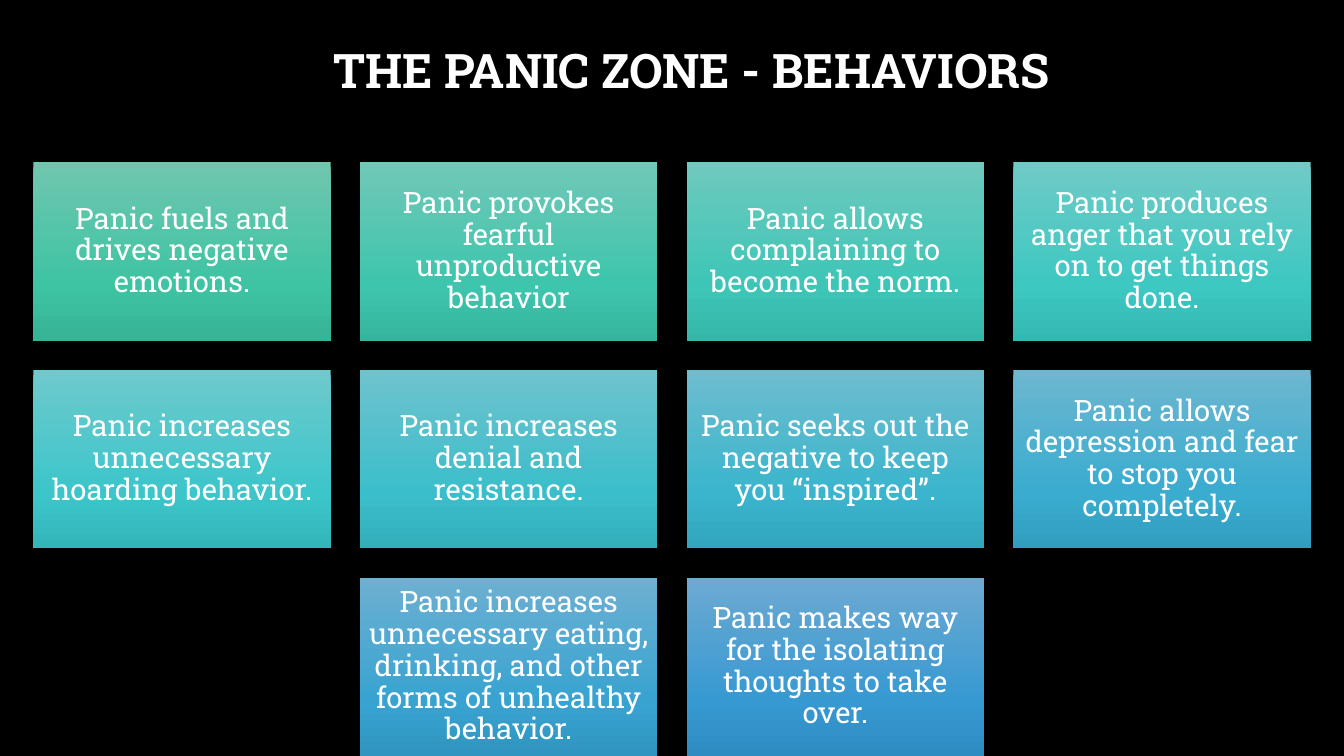
from copy import deepcopy
from pptx import Presentation, util as u
from pptx.dml.color import RGBColor
from pptx.enum import shapes, text
from pptx.oxml.ns import qn

# Content: each behavior with its gradient, top to bottom
TITLE = "THE PANIC ZONE - BEHAVIORS"
BEHAVIOR_ROWS = [
    [("Panic fuels and drives negative emotions.", "70C6AF 3EC4A3 37B395"),
     ("Panic provokes fearful unproductive behavior", "70C8B7 3EC5AD 36B59E"),
     ("Panic allows complaining to become the norm.", "6FC9BE 3DC6B7 35B6A8"),
     ("Panic produces anger that you rely on to get things done.", "6FCAC6 3DC8C2 34B8B3")],
    [("Panic increases unnecessary hoarding behavior.", "6EC9CC 3CC6CA 33B6BA"),
     ("Panic increases denial and resistance.", "6EC3CD 3BBECB 33AEBB"),
     ("Panic seeks out the negative to keep you “inspired”.", "6EBDCE 3AB5CD 32A6BD"),
     ("Panic allows depression and fear to stop you completely.", "6DB7D0 39ACCF 319EBF")],
    [("Panic increases unnecessary eating, drinking, and other forms of unhealthy behavior.",
      "6DB0D1 38A3D1 3095C0"),
     ("Panic makes way for the isolating thoughts to take over.", "6DAAD2 3799D2 2F8CC2")],
]
COLORS = {"background": "000000", "text": "FFFFFF"}
STOPS = (0, 0.69, 1)
FONT = "Roboto Slab"

# Grid, in inches
WIDTH, HEIGHT = 13.33, 7.5
COLUMNS = 4
CARD_W, CARD_H, GAP = 2.95, 1.77, 0.29
GRID_TOP = 1.61
INSET = 0.09

deck = Presentation()
deck.slide_width, deck.slide_height = u.Inches(WIDTH), u.Inches(HEIGHT)
slide = deck.slides.add_slide(deck.slide_layouts[6])
slide.background.fill.solid()
slide.background.fill.fore_color.rgb = RGBColor.from_string(COLORS["background"])


def write(frame, words, size, bold=False):
    frame.word_wrap = True
    frame.vertical_anchor = text.MSO_ANCHOR.MIDDLE
    line = frame.paragraphs[0]
    line.alignment = text.PP_ALIGN.CENTER
    line.line_spacing = 0.9
    run = line.add_run()
    run.text = words
    run.font.name, run.font.size, run.font.bold = FONT, u.Pt(size), bold
    run.font.color.rgb = RGBColor.from_string(COLORS["text"])


def fill_gradient(card, shades):
    card.fill.gradient()
    card.fill.gradient_angle = 270
    stop_list = card._element.spPr.find(qn("a:gradFill")).find(qn("a:gsLst"))
    stop_list.append(deepcopy(stop_list[-1]))
    for stop, position, shade in zip(card.fill.gradient_stops, STOPS, shades):
        stop.position = position
        stop.color.rgb = RGBColor.from_string(shade)


def add_card(left, top, words, shades):
    card = slide.shapes.add_shape(
        shapes.MSO_SHAPE.RECTANGLE,
        u.Inches(left), u.Inches(top), u.Inches(CARD_W), u.Inches(CARD_H))
    card.shadow.inherit = False
    card.line.fill.background()
    fill_gradient(card, shades)
    frame = card.text_frame
    frame.margin_left = frame.margin_right = u.Inches(INSET)
    frame.margin_top = frame.margin_bottom = u.Inches(INSET)
    write(frame, words, 21)


# Title
heading = slide.shapes.add_textbox(u.Inches(1.2), 0, u.Inches(11.32), u.Inches(1.45))
write(heading.text_frame, TITLE, 34, bold=True)

# Behavior cards, each row centred on the slide
for row, behaviors in enumerate(BEHAVIOR_ROWS):
    row_width = len(behaviors) * (CARD_W + GAP) - GAP
    row_left = (WIDTH - row_width) / 2
    for column, (words, shades) in enumerate(behaviors):
        add_card(row_left + column * (CARD_W + GAP), GRID_TOP + row * (CARD_H + GAP),
                 words, shades.split())

deck.save("out.pptx")
